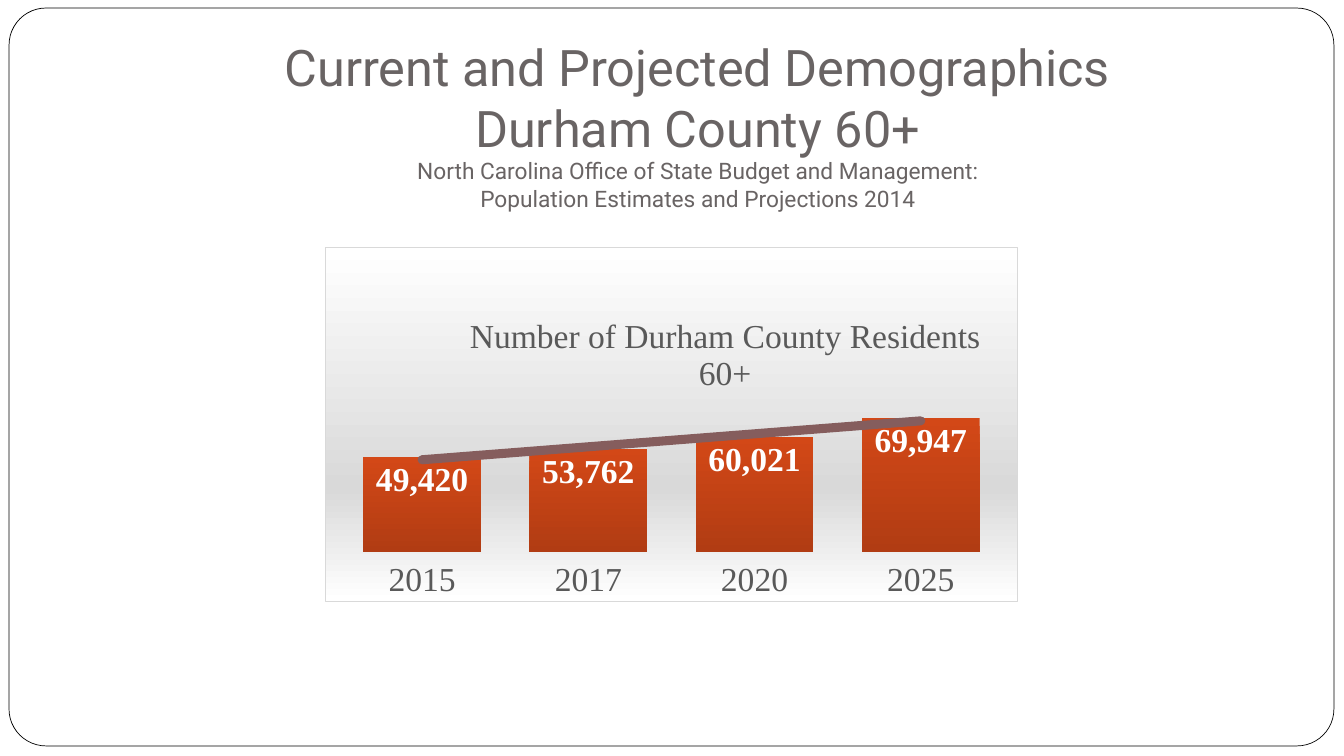
from dataclasses import dataclass

from lxml import etree
from pptx import Presentation
from pptx.chart.data import CategoryChartData
from pptx.dml.color import RGBColor
from pptx.enum.chart import XL_CHART_TYPE, XL_LABEL_POSITION, XL_TICK_LABEL_POSITION, XL_TICK_MARK
from pptx.enum.shapes import MSO_SHAPE
from pptx.enum.text import MSO_ANCHOR, PP_ALIGN
from pptx.oxml import parse_xml
from pptx.oxml.ns import nsdecls, qn
from pptx.util import Inches, Pt

COLUMN = XL_CHART_TYPE.COLUMN_CLUSTERED
INSIDE_END = XL_LABEL_POSITION.INSIDE_END
LOW = XL_TICK_LABEL_POSITION.LOW
NO_TICK = XL_TICK_MARK.NONE
ROUNDED = MSO_SHAPE.ROUNDED_RECTANGLE
MIDDLE = MSO_ANCHOR.MIDDLE
CENTER = PP_ALIGN.CENTER

COLORS = {
    "white": "FFFFFF",
    "black": "000000",
    "heading": "696464",
    "chart_text": "595959",
    "gray": "D9D9D9",
    "orange": "D34817",
    "rust": "B13C13",
    "trend": "855D5D",
}
HEADING_FONT = "Roboto"
CHART_FONT = "Times New Roman"


@dataclass(frozen=True)
class HeadingLine:
    words: str
    size: float


@dataclass(frozen=True)
class Census:
    year: str
    residents: int


HEADING = [
    HeadingLine("Current and Projected Demographics", 36),
    HeadingLine("Durham County 60+", 36),
    HeadingLine("North Carolina Office of State Budget and Management:", 16.2),
    HeadingLine("Population Estimates and Projections 2014", 16.2),
]
RESIDENTS = [
    Census("2015", 49420),
    Census("2017", 53762),
    Census("2020", 60021),
    Census("2025", 69947),
]


def rgb(name: str) -> RGBColor:
    return RGBColor.from_string(COLORS[name])


def format_font(font, *, size: float, color: str, name: str = CHART_FONT, bold: bool = False) -> None:
    font.size, font.name, font.bold = Pt(size), name, bold
    font.color.rgb = rgb(color)


def gradient_properties(stops: list[tuple[int, str]], border: str = ""):
    """Return chart shape properties with a top-to-bottom gradient."""
    stop_xml = "".join(
        f'<a:gs pos="{percent * 1000}"><a:srgbClr val="{COLORS[name]}"/></a:gs>'
        for percent, name in stops
    )
    line = "<a:ln><a:noFill/></a:ln>"
    if border:
        line = (f'<a:ln w="{Pt(0.75)}"><a:solidFill><a:srgbClr val="{COLORS[border]}"/>'
                "</a:solidFill></a:ln>")
    return parse_xml(
        f'<c:spPr {nsdecls("c", "a")}><a:gradFill><a:gsLst>{stop_xml}</a:gsLst>'
        f'<a:lin ang="5400000" scaled="0"/></a:gradFill>{line}</c:spPr>'
    )


def set_layout(parent, **fractions: float) -> None:
    """Place a chart part by fractions of the chart's width and height."""
    layout = parent.get_or_add_layout() if hasattr(parent, "get_or_add_layout") else parent.find(qn("c:layout"))
    if layout is None:
        layout = parse_xml(f'<c:layout {nsdecls("c")}/>')
        parent.insert(0, layout)
    for child in list(layout):
        layout.remove(child)
    manual = etree.SubElement(layout, qn("c:manualLayout"))
    settings = {"xMode": "edge", "yMode": "edge", **fractions}
    if "w" in fractions:
        settings = {"layoutTarget": "inner", **settings}
    for tag, setting in settings.items():
        etree.SubElement(manual, qn(f"c:{tag}")).set("val", str(setting))


def add_trend_line(series) -> None:
    trend = parse_xml(
        f'<c:trendline {nsdecls("c", "a")}><c:spPr><a:ln w="{Pt(6.5)}" cap="rnd"><a:solidFill>'
        f'<a:srgbClr val="{COLORS["trend"]}"/></a:solidFill><a:round/></a:ln></c:spPr>'
        '<c:trendlineType val="linear"/><c:dispRSqr val="0"/><c:dispEq val="0"/></c:trendline>'
    )
    series._element.find(qn("c:cat")).addprevious(trend)


def add_frame(slide) -> None:
    frame = slide.shapes.add_shape(ROUNDED, Inches(0.09), Inches(0.08), Inches(13.14), Inches(7.32))
    frame.adjustments[0] = 0.05
    frame.shadow.inherit = False
    frame.fill.solid()
    frame.fill.fore_color.rgb = rgb("white")
    frame.line.color.rgb = rgb("black")
    frame.line.width = Pt(0.5)


def add_heading(slide, lines: list[HeadingLine]) -> None:
    box = slide.shapes.add_textbox(Inches(2.67), Inches(0.3), Inches(8.5), Inches(1.91))
    frame = box.text_frame
    frame.word_wrap = True
    frame.vertical_anchor = MIDDLE
    frame.margin_bottom = Inches(0.1)
    for index, line in enumerate(lines):
        paragraph = frame.add_paragraph() if index else frame.paragraphs[0]
        paragraph.alignment = CENTER
        run = paragraph.add_run()
        run.text = line.words
        format_font(run.font, size=line.size, color="heading", name=HEADING_FONT)


def add_residents_chart(slide, counts: list[Census]) -> None:
    chart_data = CategoryChartData(number_format="#,##0")
    chart_data.categories = [count.year for count in counts]
    chart_data.add_series("Series 1", [count.residents for count in counts])
    chart = slide.shapes.add_chart(
        COLUMN, Inches(3.22), Inches(2.45), Inches(6.88), Inches(3.52), chart_data
    ).chart
    format_font(chart.font, size=10, color="black")
    chart.has_legend = False

    title = chart.chart_title
    title_line = title.text_frame.paragraphs[0]
    title_line.text = "Number of Durham County Residents 60+"
    format_font(title_line.runs[0].font, size=24, color="chart_text")
    set_layout(title._element, x=0.2, y=0.17)

    years = chart.category_axis
    years.major_tick_mark = NO_TICK
    years.tick_label_position = LOW
    years.format.line.fill.background()
    format_font(years.tick_labels.font, size=24, color="chart_text")
    values = chart.value_axis
    values.visible = False
    values.has_major_gridlines = False
    values.minimum_scale, values.maximum_scale, values.major_unit = 0, 100000, 10000

    plot = chart.plots[0]
    plot.gap_width = 41
    plot.vary_by_categories = False
    series = plot.series[0]
    series._element.find(qn("c:tx")).addnext(gradient_properties([(0, "orange"), (100, "rust")]))
    labels = series.data_labels
    labels.show_value = True
    labels.position = INSIDE_END
    labels.number_format, labels.number_format_is_linked = "#,##0", False
    format_font(labels.font, size=24, color="white", bold=True)
    add_trend_line(series)

    chart_body = chart._chartSpace.find(qn("c:chart"))
    set_layout(chart_body.find(qn("c:plotArea")), x=0.02, y=0.32, w=0.96, h=0.54)
    background = [(0, "white"), (68, "gray"), (100, "white")]
    chart_body.addnext(gradient_properties(background, border="gray"))


def main() -> None:
    presentation = Presentation()
    presentation.slide_width, presentation.slide_height = Inches(13.33), Inches(7.5)
    slide = presentation.slides.add_slide(presentation.slide_layouts[6])
    add_frame(slide)
    add_heading(slide, HEADING)
    add_residents_chart(slide, RESIDENTS)
    presentation.save("out.pptx")


if __name__ == "__main__":
    main()
